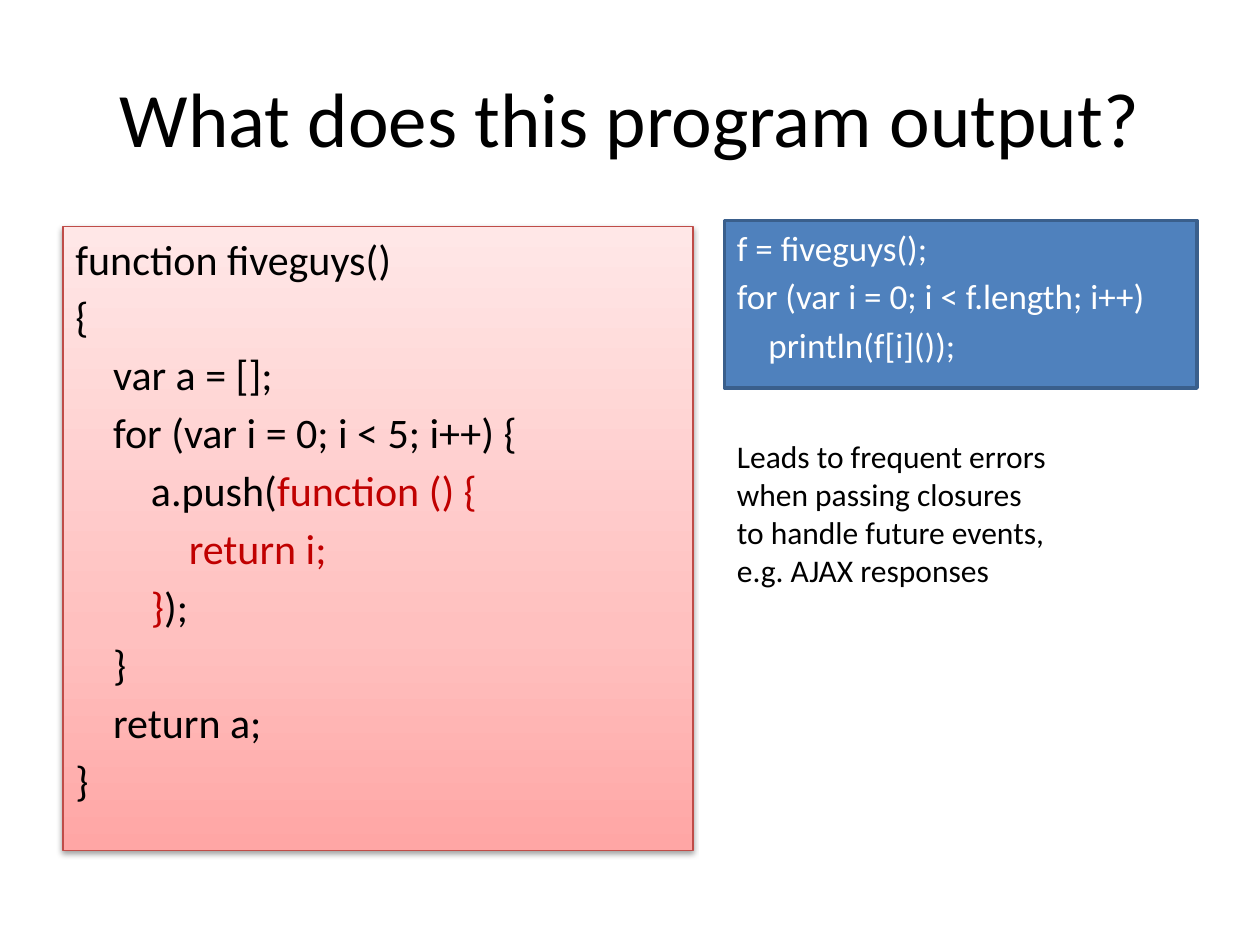
from lxml import etree
from pptx import Presentation
from pptx import util as u
from pptx.dml.color import RGBColor
from pptx.enum import shapes, text
from pptx.oxml.ns import qn

BLACK = RGBColor(0x00, 0x00, 0x00)
WHITE = RGBColor(0xFF, 0xFF, 0xFF)
RED = RGBColor(0xC0, 0x00, 0x00)
BLUE = RGBColor(0x4F, 0x81, 0xBD)
NAVY = RGBColor(0x3A, 0x5F, 0x8C)
BRICK = RGBColor(0xBF, 0x4C, 0x48)
PINKS = [(0, RGBColor(0xFF, 0xA6, 0xA5)), (35, RGBColor(0xFF, 0xC0, 0xBF)),
         (100, RGBColor(0xFF, 0xE7, 0xE7))]

FONT = "Calibri"
TITLE = "What does this program output?"
FUNCTION = [
    (0, [("function fiveguys()", BLACK)]),
    (0, [("{", BLACK)]),
    (1, [("var a = [];", BLACK)]),
    (1, [("for (var i = 0; i < 5; i++) {", BLACK)]),
    (2, [("a.push(", BLACK), ("function () {", RED)]),
    (3, [("return i;", RED)]),
    (2, [("}", RED), (");", BLACK)]),
    (1, [("}", BLACK)]),
    (1, [("return a;", BLACK)]),
    (0, [("}", BLACK)]),
]
CALLER = [
    (0, [("f = fiveguys();", WHITE)]),
    (0, [("for (var i = 0; i < f.length; i++)", WHITE)]),
    (1, [("println(f[i]());", WHITE)]),
]
NOTE = [(0, [(line, BLACK)]) for line in (
    "Leads to frequent errors", "when passing closures",
    "to handle future events,", "e.g. AJAX responses")]


def set_all(obj, values):
    for name, value in values.items():
        setattr(obj, name, value)


def write(tf, lines, size, gap=0.0, align=text.PP_ALIGN.LEFT):
    step = u.Inches(size / 80)
    for i, (level, runs) in enumerate(lines):
        p = tf.paragraphs[0] if i == 0 else tf.add_paragraph()
        set_all(p, {"alignment": align, "space_before": u.Pt(size * gap)})
        p._p.get_or_add_pPr().set("marL", str(level * step))
        for words, color in runs:
            r = p.add_run()
            r.text = words
            set_all(r.font, {"name": FONT, "size": u.Pt(size)})
            r.font.color.rgb = color


def add_code(s, box, lines, size, line, width):
    sp = s.shapes.add_shape(shapes.MSO_SHAPE.RECTANGLE, *map(u.Inches, box))
    sp.shadow.inherit = False
    sp.line.color.rgb = line
    sp.line.width = u.Pt(width)
    set_all(sp.text_frame, {"word_wrap": True,
                            "vertical_anchor": text.MSO_ANCHOR.TOP})
    write(sp.text_frame, lines, size, gap=0.18)
    return sp


def add_gradient(sp, stops, angle):
    sp.fill.gradient()
    sp.fill.gradient_angle = angle
    gs_list = sp._element.spPr.find(".//" + qn("a:gsLst"))
    for gs in list(gs_list):
        gs_list.remove(gs)
    for pos, color in stops:
        gs = etree.SubElement(gs_list, qn("a:gs"), pos=str(pos * 1000))
        etree.SubElement(gs, qn("a:srgbClr"), val=str(color))


def add_shadow(sp, blur, dist, angle, alpha):
    effects = sp._element.spPr.find(qn("a:effectLst"))
    shadow = etree.SubElement(
        effects, qn("a:outerShdw"), blurRad=str(u.Pt(blur)),
        dist=str(u.Pt(dist)), dir=str(angle * 60000), rotWithShape="0")
    color = etree.SubElement(shadow, qn("a:srgbClr"), val=str(BLACK))
    etree.SubElement(color, qn("a:alpha"), val=str(alpha * 1000))


def main():
    prs = Presentation()
    set_all(prs, {"slide_width": u.Inches(10), "slide_height": u.Inches(7.5)})
    s = prs.slides.add_slide(prs.slide_layouts[5])

    title = s.shapes.title
    set_all(title, dict(zip(("left", "top", "width", "height"),
                            map(u.Inches, (0.5, 0.3, 9, 1.25)))))
    title.text_frame.vertical_anchor = text.MSO_ANCHOR.MIDDLE
    write(title.text_frame, [(0, [(TITLE, BLACK)])], 44,
          align=text.PP_ALIGN.CENTER)

    function = add_code(s, (0.5, 1.8, 5, 4.95), FUNCTION, 24, BRICK, 0.75)
    add_gradient(function, PINKS, 90)
    add_shadow(function, 3.1, 1.6, 90, 38)

    caller = add_code(s, (5.75, 1.75, 3.75, 1.33), CALLER, 20, NAVY, 2)
    caller.fill.solid()
    caller.fill.fore_color.rgb = BLUE

    note = s.shapes.add_textbox(*map(u.Inches, (5.75, 3.42, 2.68, 1.31)))
    set_all(note.text_frame, {"word_wrap": False,
                              "auto_size": text.MSO_AUTO_SIZE.SHAPE_TO_FIT_TEXT})
    write(note.text_frame, NOTE, 18)

    prs.save("out.pptx")


if __name__ == "__main__":
    main()
